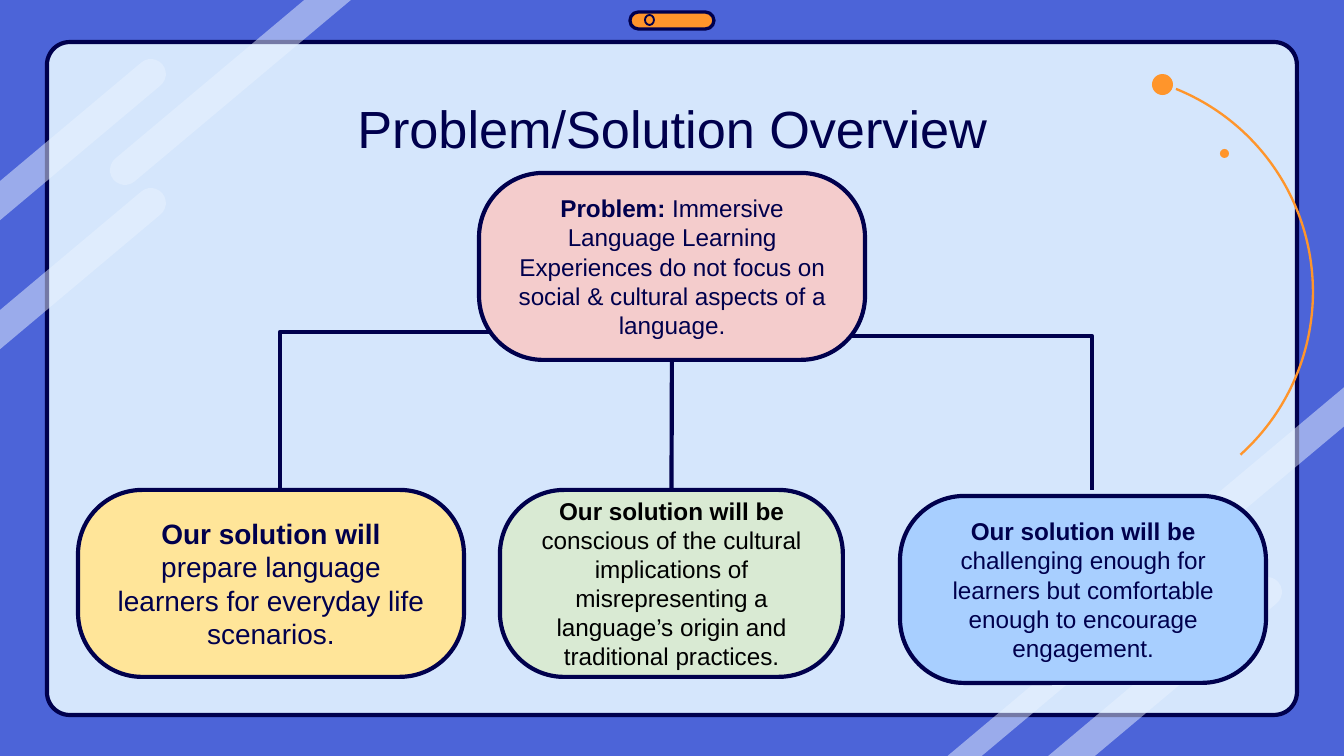
"""Build the Problem/Solution Overview slide."""
from math import cos, inf, radians, sin

from lxml.etree import SubElement
from pptx import Presentation
from pptx.dml.color import RGBColor
from pptx.enum.shapes import MSO_CONNECTOR as CONN, MSO_SHAPE as SHAPE
from pptx.enum.text import MSO_ANCHOR as ANCHOR, PP_ALIGN as ALIGN
from pptx.oxml.ns import qn
from pptx.util import Pt

W, H = 1344, 756
SCALE = 9144000 / W
COLORS = {
    "back": "4C64D8", "panel": "D5E6FC", "navy": "00004D", "stripe": "E9F3FF",
    "orange": "FF952B", "pink": "F4CCCC", "yellow": "FFE599",
    "green": "D9EAD3", "blue": "A8CFFF", "black": "000000",
}
FRAME = {"word_wrap": True, "vertical_anchor": ANCHOR.MIDDLE}
MARGINS = {"margin_left": 13, "margin_top": 13, "margin_right": 13, "margin_bottom": 13}
TITLE_MARGINS = {**MARGINS, "margin_top": 20, "margin_bottom": 6}
STRIPE_ANGLE = radians(40)
STRIPES = [
    (1267, 592, 15, -1), (1116, 629, 11, -1), (125, 170, 15, 1),
    (151, 74, 15, -1), (151, 203, 15, -1), (1189, 537, 15, 1),
]
BOXES = [
    ((900, 496, 366, 187), "blue", "navy", 13, "Our solution will be ",
     "challenging enough for learners but comfortable enough to encourage engagement."),
    ((500, 490, 343, 187), "green", "black", 13, "Our solution will be ",
     "conscious of the cultural implications of misrepresenting a "
     "language’s origin and traditional practices."),
    ((78, 490, 386, 187), "yellow", "navy", 15, "Our solution will ",
     "prepare language learners for everyday life scenarios."),
    ((479, 173, 386, 187), "pink", "navy", 13, "Problem: ",
     "Immersive Language Learning Experiences do not focus on "
     "social & cultural aspects of a language."),
]


def px(n):
    """Turn px into EMU."""
    return round(n * SCALE)


def rgb(name):
    """Look up a named colour."""
    return RGBColor.from_string(COLORS[name])


def style(sp, fill=None, line=None, width=0):
    """Set fill and line, and drop the shadow."""
    sp.shadow.inherit = False
    if fill:
        sp.fill.solid()
        sp.fill.fore_color.rgb = rgb(fill)
    else:
        sp.fill.background()
    if line:
        sp.line.color.rgb = rgb(line)
        sp.line.width = Pt(width)
    else:
        sp.line.fill.background()


def add_shape(s, kind, at, adj=(), **look):
    """Add a preset shape."""
    sp = s.shapes.add_shape(kind, *map(px, at))
    for i, value in enumerate(adj):
        sp.adjustments[i] = value
    style(sp, **look)
    return sp


def add_stripe(s, x, y, r, way):
    """Add a translucent stripe from a round cap to the slide edge."""
    dx, dy = way * cos(STRIPE_ANGLE), -way * sin(STRIPE_ANGLE)

    def edge_point(px0, py0):
        """Follow the stripe to the first slide edge."""
        t = min(((W if dx > 0 else 0) - px0) / dx, ((H if dy > 0 else 0) - py0) / dy, inf)
        return px0 + t * dx, py0 + t * dy

    cap = []
    for step in range(13):
        a = radians(15 * step)
        c, d = r * cos(a), r * sin(a)
        cap.append((x - c * dy - d * dx, y + c * dx - d * dy))
    points = [edge_point(*cap[0]), *cap, edge_point(*cap[-1])]
    start, *rest = [(px(u), px(v)) for u, v in points]
    builder = s.shapes.build_freeform(*start)
    builder.add_line_segments(rest, close=True)
    sp = builder.convert_to_shape()
    style(sp, "stripe")
    color = sp._element.spPr.find(f".//{qn('a:srgbClr')}")
    SubElement(color, qn("a:alpha"), val="50000")


def add_text(sp, runs, size, color, margins=MARGINS):
    """Write centred runs of (text, bold)."""
    tf = sp.text_frame
    for key, value in FRAME.items():
        setattr(tf, key, value)
    for key, value in margins.items():
        setattr(tf, key, px(value))
    p = tf.paragraphs[0]
    p.alignment = ALIGN.CENTER
    for text, bold in runs:
        r = p.add_run()
        r.text = text
        for key, value in {"name": "Arial", "size": Pt(size), "bold": bold}.items():
            setattr(r.font, key, value)
        r.font.color.rgb = rgb(color)


def add_link(s, kind, *ends):
    """Add a navy connector."""
    cxn = s.shapes.add_connector(kind, *map(px, ends))
    cxn.line.color.rgb = rgb("navy")
    cxn.line.width = Pt(2.25)
    spPr = cxn._element.spPr
    SubElement(spPr, qn("a:effectLst"))
    if kind == CONN.ELBOW:
        av = spPr.find(f".//{qn('a:avLst')}")
        SubElement(av, qn("a:gd"), name="adj1", fmla="val 0")
    return cxn


def add_backdrop(s):
    """Add the panel, stripes and orange ornaments."""
    s.background.fill.solid()
    s.background.fill.fore_color.rgb = rgb("back")
    add_shape(s, SHAPE.ROUNDED_RECTANGLE, (47, 42, 1250, 673), [0.034],
              fill="panel", line="navy", width=2.25)
    for stripe in STRIPES:
        add_stripe(s, *stripe)
    add_shape(s, SHAPE.ROUNDED_RECTANGLE, (630, 12, 84, 17), [0.5],
              fill="orange", line="navy", width=1.75)
    add_shape(s, SHAPE.OVAL, (645, 15, 9, 10), line="navy", width=1)
    add_shape(s, SHAPE.ARC, (875, 73, 438, 438), [292 * 0.6, 48 * 0.6],
              line="orange", width=1.25)
    for dot in [(1220, 149, 9, 9), (1152, 74, 21, 21)]:
        add_shape(s, SHAPE.OVAL, dot, fill="orange")


def main():
    """Build and save the slide."""
    prs = Presentation()
    prs.slide_width, prs.slide_height = px(W), px(H)
    s = prs.slides.add_slide(prs.slide_layouts[6])
    add_backdrop(s)
    title = s.shapes.add_textbox(*map(px, (106, 78, 1132, 85)))
    add_text(title, [("Problem/Solution Overview", False)], 28, "navy", TITLE_MARGINS)
    trunk = add_link(s, CONN.STRAIGHT, 672, 336, 672, 490)
    add_link(s, CONN.ELBOW, 280, 490, 681, 332)
    add_link(s, CONN.ELBOW, 1092, 490, 681, 336)
    for at, fill, color, size, lead, rest in BOXES:
        sp = add_shape(s, SHAPE.ROUNDED_RECTANGLE, at, [0.343],
                       fill=fill, line="navy", width=2.25)
        add_text(sp, [(lead, True), (rest, False)], size, color)
        if fill == "green":
            trunk.end_connect(sp, 0)
    prs.save("out.pptx")


if __name__ == "__main__":
    main()
